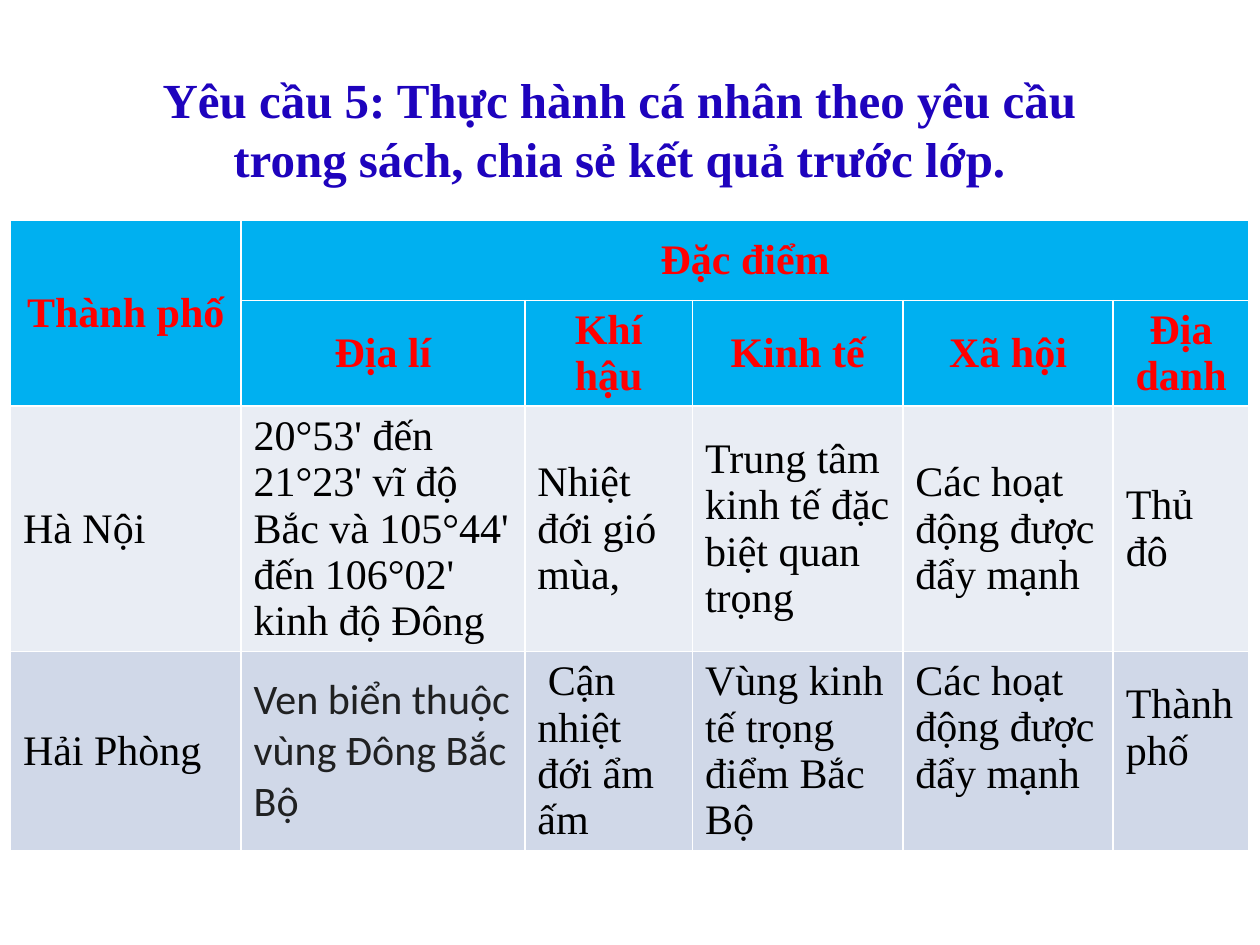
import pptx
import pptx.dml.color
import pptx.enum.text
import pptx.util
from pptx.util import Cm

TITLE = "Yêu cầu 5: Thực hành cá nhân theo yêu cầu trong sách, chia sẻ kết quả trước lớp."
CITY_TABLE = [
    ["Thành phố", "Đặc điểm", "", "", "", ""],
    ["", "Địa lí", "Khí hậu", "Kinh tế", "Xã hội", "Địa danh"],
    ["Hà Nội", "20°53' đến 21°23' vĩ độ Bắc và 105°44' đến 106°02' kinh độ Đông",
     "Nhiệt đới gió mùa, ", "Trung tâm kinh tế đặc biệt quan trọng",
     "Các hoạt động được đẩy mạnh", "Thủ đô"],
    ["Hải Phòng", "Ven biển thuộc vùng Đông Bắc Bộ", " Cận nhiệt đới ẩm ấm",
     "Vùng kinh tế trọng điểm Bắc Bộ", "Các hoạt động được đẩy mạnh", "Thành phố"],
]
MERGES = [((0, 0), (1, 0)), ((0, 1), (0, 5))]
COLUMN_WIDTHS = [4.65, 5.72, 3.38, 4.24, 4.24, 2.74]
ROW_HEIGHTS = [1.63, 2.11, 4.95, 4]
HEADER_ROWS = 2
RAISED_CELLS = [(3, 4), (3, 5)]
RAISED_MARGIN = Cm(1.07)

ALIGN = pptx.enum.text.PP_ALIGN
ANCHOR = pptx.enum.text.MSO_ANCHOR
SERIF = "Times New Roman"
THEME = {
    "title": {"name": SERIF, "size": 28, "bold": True, "color": "1E03BD"},
    "header": {"name": SERIF, "size": 24, "bold": True, "color": "FF0000"},
    "body": {"name": SERIF, "size": 24, "bold": False, "color": "000000"},
    "location": {"name": "Calibri", "size": 24, "bold": False, "color": "202122"},
    "row_fills": ["00B0F0", "00B0F0", "E9EDF4", "D0D8E8"],
}
STYLE_EXCEPTIONS = {(3, 1): "location"}


def rgb(value):
    return pptx.dml.color.RGBColor.from_string(value)


def write_text(text_frame, text, style, alignment):
    paragraph = text_frame.paragraphs[0]
    paragraph.alignment = alignment
    run = paragraph.add_run()
    run.text = text
    formats = dict(THEME[style])
    run.font.color.rgb = rgb(formats.pop("color"))
    formats["size"] = pptx.util.Pt(formats["size"])
    for attribute, value in formats.items():
        setattr(run.font, attribute, value)


def add_title(slide):
    title = slide.shapes.title
    place = {"left": Cm(1.9), "top": Cm(1.27), "width": Cm(21.17), "height": Cm(2.65)}
    for attribute, value in place.items():
        setattr(title, attribute, value)
    frame_formats = {"word_wrap": True, "vertical_anchor": ANCHOR.TOP,
                     "auto_size": pptx.enum.text.MSO_AUTO_SIZE.NONE}
    for attribute, value in frame_formats.items():
        setattr(title.text_frame, attribute, value)
    write_text(title.text_frame, TITLE, "title", ALIGN.CENTER)


def add_city_table(slide):
    table = slide.shapes.add_table(
        len(ROW_HEIGHTS), len(COLUMN_WIDTHS), Cm(0.21), Cm(4.43),
        Cm(sum(COLUMN_WIDTHS)), Cm(sum(ROW_HEIGHTS))).table
    for column, width in zip(table.columns, COLUMN_WIDTHS):
        column.width = Cm(width)
    for row, height in zip(table.rows, ROW_HEIGHTS):
        row.height = Cm(height)
    for first, last in MERGES:
        table.cell(*first).merge(table.cell(*last))

    for row_index, texts in enumerate(CITY_TABLE):
        is_header = row_index < HEADER_ROWS
        for column_index, text in enumerate(texts):
            position = (row_index, column_index)
            cell = table.cell(*position)
            cell.fill.solid()
            cell.fill.fore_color.rgb = rgb(THEME["row_fills"][row_index])
            cell.vertical_anchor = ANCHOR.MIDDLE
            if position in RAISED_CELLS:
                cell.margin_bottom = RAISED_MARGIN
            if text:
                style = STYLE_EXCEPTIONS.get(position, "header" if is_header else "body")
                write_text(cell.text_frame, text, style,
                           ALIGN.CENTER if is_header else ALIGN.LEFT)


def main():
    presentation = pptx.Presentation()
    presentation.slide_width, presentation.slide_height = Cm(25.4), Cm(19.05)
    slide = presentation.slides.add_slide(presentation.slide_layouts.get_by_name("Title Only"))
    add_title(slide)
    add_city_table(slide)
    presentation.save("out.pptx")


if __name__ == "__main__":
    main()
